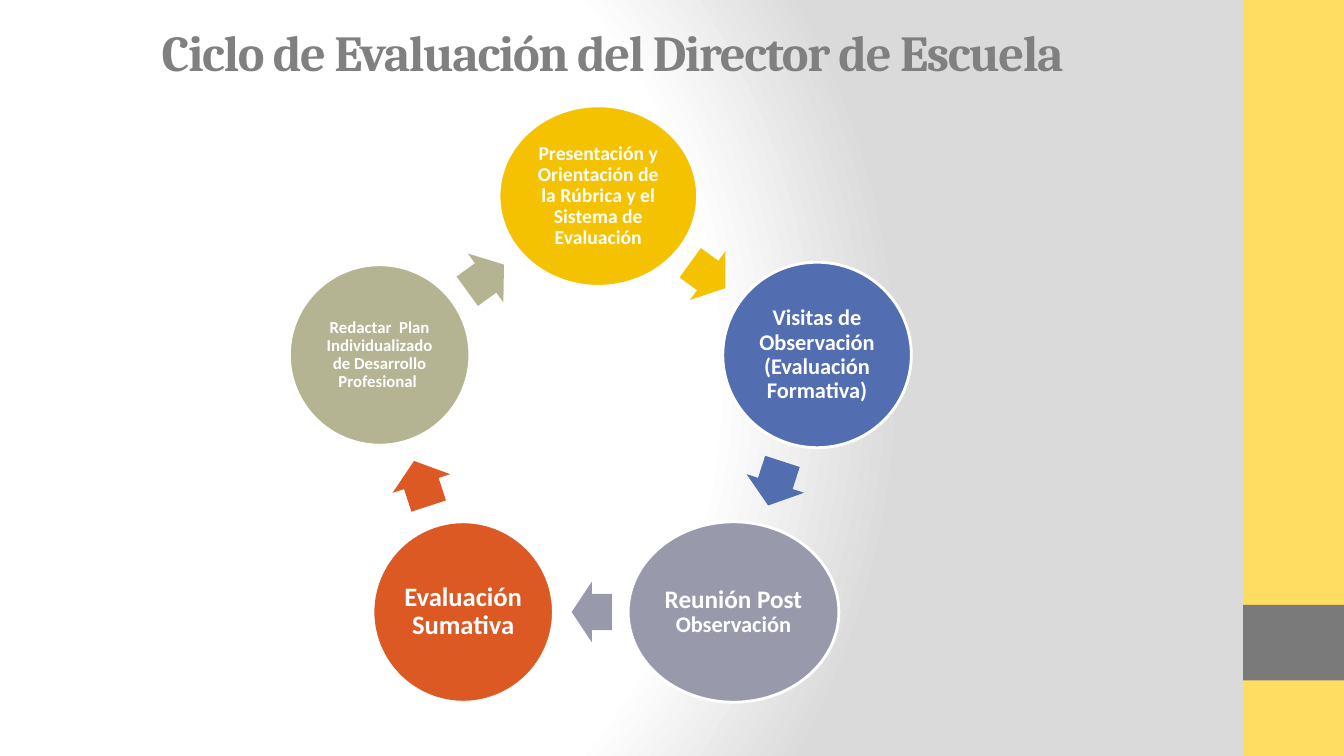
"""Build the school principal evaluation cycle slide."""
from dataclasses import dataclass
from math import cos, radians, sin

from lxml import etree
from pptx import Presentation
from pptx import util as u
from pptx.dml.color import RGBColor
from pptx.enum import shapes, text
from pptx.oxml import ns

COLORS = {
    "white": "FFFFFF", "shade": "DADADA", "band": "FEDD61", "block": "7A7A7A",
    "title": "808080", "gold": "F5C201", "blue": "526DB0", "lilac": "989AAC",
    "orange": "DC5924", "olive": "B4B392",
}
WIDTH, HEIGHT = u.Inches(13.33), u.Inches(7.5)
CENTER_X, CENTER_Y = 0.4452 * WIDTH, 0.5635 * HEIGHT
RADIUS = 0.3041 * HEIGHT
ARROW_BREADTH = 0.08 * HEIGHT


@dataclass(frozen=True)
class Stage:
    """A cycle stage, with lengths as shares of the slide height."""
    spans: tuple[tuple[str, int], ...]
    color: str
    width: float
    height: float
    arrow: float
    shift: float = 0
    inset: float = 0.02


STAGES = (
    Stage((("Presentación y Orientación de la Rúbrica y el Sistema de Evaluación", 14),),
          "gold", 0.2627, 0.2387, 0.0573),
    Stage((("Visitas de Observación", 16), (" ", 14), ("(Evaluación Formativa)", 16)),
          "blue", 0.2493, 0.2453, 0.0613),
    Stage((("Reunión Post ", 18), ("Observación", 16)),
          "lilac", 0.2787, 0.2387, 0.0533, 0.0087, 0.03),
    Stage((("Evaluación Sumativa", 19),),
          "orange", 0.2387, 0.2387, 0.0627, inset=0.03),
    Stage((("Redactar  Plan Individualizado de Desarrollo Profesional ", 12),),
          "olive", 0.2387, 0.2387, 0.06, -0.0055),
)
STEP = 360 / len(STAGES)


def rgb(name: str) -> RGBColor:
    """Return a named palette colour."""
    return RGBColor.from_string(COLORS[name])


def paint_background(page) -> None:
    """Fill the page with a circular white-to-grey gradient."""
    stops = "".join(
        f'<a:gs pos="{share * 1000}"><a:srgbClr val="{COLORS[name]}"/></a:gs>'
        for share, name in ((0, "white"), (75, "white"), (100, "shade")))
    page.background.fill.solid()
    solid = page.background._cSld.find(".//" + ns.qn("a:solidFill"))
    gradient = etree.fromstring(
        f'<a:gradFill {ns.nsdecls("a")} rotWithShape="1"><a:gsLst>{stops}</a:gsLst>'
        '<a:path path="circle"><a:fillToRect l="20000" t="50000" r="100000" b="50000"/>'
        '</a:path></a:gradFill>')
    solid.getparent().replace(solid, gradient)


def add_filled(page, kind, left: float, top: float, width: float, height: float, color: str):
    """Add a flat shape without an outline."""
    shape = page.shapes.add_shape(kind, *map(round, (left, top, width, height)))
    shape.shadow.inherit = False
    shape.fill.solid()
    shape.fill.fore_color.rgb = rgb(color)
    shape.line.fill.background()
    return shape


def add_span(para, words: str, size: int, font: str, color: str):
    """Append one bold run to a paragraph."""
    span = para.add_run()
    span.text = words
    span.font.name, span.font.size, span.font.bold = font, u.Pt(size), True
    span.font.color.rgb = rgb(color)
    return span


def set_title(page, words: str) -> None:
    """Place and format the title placeholder."""
    box = page.shapes.title
    box.left, box.top = round(-0.0165 * WIDTH), round(0.02 * HEIGHT)
    box.width, box.height = round(0.952 * WIDTH), round(0.0947 * HEIGHT)
    frame = box.text_frame
    frame.auto_size = text.MSO_AUTO_SIZE.NONE
    frame.word_wrap = True
    frame.vertical_anchor = text.MSO_ANCHOR.MIDDLE
    para = frame.paragraphs[0]
    para.alignment = text.PP_ALIGN.CENTER
    span = add_span(para, words, 36, "Cambria", "title")
    span._r.get_or_add_rPr().set("spc", "-100")


def ring_point(index: int) -> tuple[float, float]:
    """Return the centre of a stage on the ring."""
    angle = radians(index * STEP - 90)
    return CENTER_X + RADIUS * cos(angle), CENTER_Y + RADIUS * sin(angle)


def add_stage(page, stage: Stage, index: int) -> None:
    """Draw a stage ellipse with its label."""
    x, y = ring_point(index)
    width, height = stage.width * HEIGHT, stage.height * HEIGHT
    ellipse = add_filled(page, shapes.MSO_SHAPE.OVAL, x - width / 2, y - height / 2,
                         width, height, stage.color)
    ellipse.line.color.rgb = rgb("white")
    ellipse.line.width = u.Pt(2)
    frame = ellipse.text_frame
    frame.word_wrap = True
    frame.vertical_anchor = text.MSO_ANCHOR.MIDDLE
    inset = u.Inches(stage.inset)
    frame.margin_left = frame.margin_right = inset
    frame.margin_top = frame.margin_bottom = inset
    para = frame.paragraphs[0]
    para.alignment = text.PP_ALIGN.CENTER
    para.line_spacing = 0.9
    for words, size in stage.spans:
        add_span(para, words, size, "Calibri", "white")


def add_arrow(page, stage: Stage, index: int) -> None:
    """Draw the arrow leading to the next stage."""
    (x1, y1), (x2, y2) = ring_point(index), ring_point(index + 1)
    heading = (index + 0.5) * STEP
    shift, length = stage.shift * HEIGHT, stage.arrow * HEIGHT
    x = (x1 + x2) / 2 + shift * cos(radians(heading))
    y = (y1 + y2) / 2 + shift * sin(radians(heading))
    arrow = add_filled(page, shapes.MSO_SHAPE.RIGHT_ARROW, x - length / 2,
                       y - ARROW_BREADTH / 2, length, ARROW_BREADTH, stage.color)
    arrow.adjustments[0], arrow.adjustments[1] = 0.6, 0.5
    arrow.rotation = heading


def main() -> None:
    """Assemble and save the deck."""
    deck = Presentation()
    deck.slide_width, deck.slide_height = WIDTH, HEIGHT
    page = deck.slides.add_slide(deck.slide_layouts.get_by_name("Title Only"))
    paint_background(page)
    set_title(page, "Ciclo de Evaluación del Director de Escuela ")
    for top, height, color in ((0, 1, "band"), (0.8, 0.1, "block")):
        add_filled(page, shapes.MSO_SHAPE.RECTANGLE, 0.925 * WIDTH, top * HEIGHT,
                   0.075 * WIDTH, height * HEIGHT, color)
    for index, stage in enumerate(STAGES):
        add_stage(page, stage, index)
        add_arrow(page, stage, index)
    deck.save("out.pptx")


if __name__ == "__main__":
    main()
